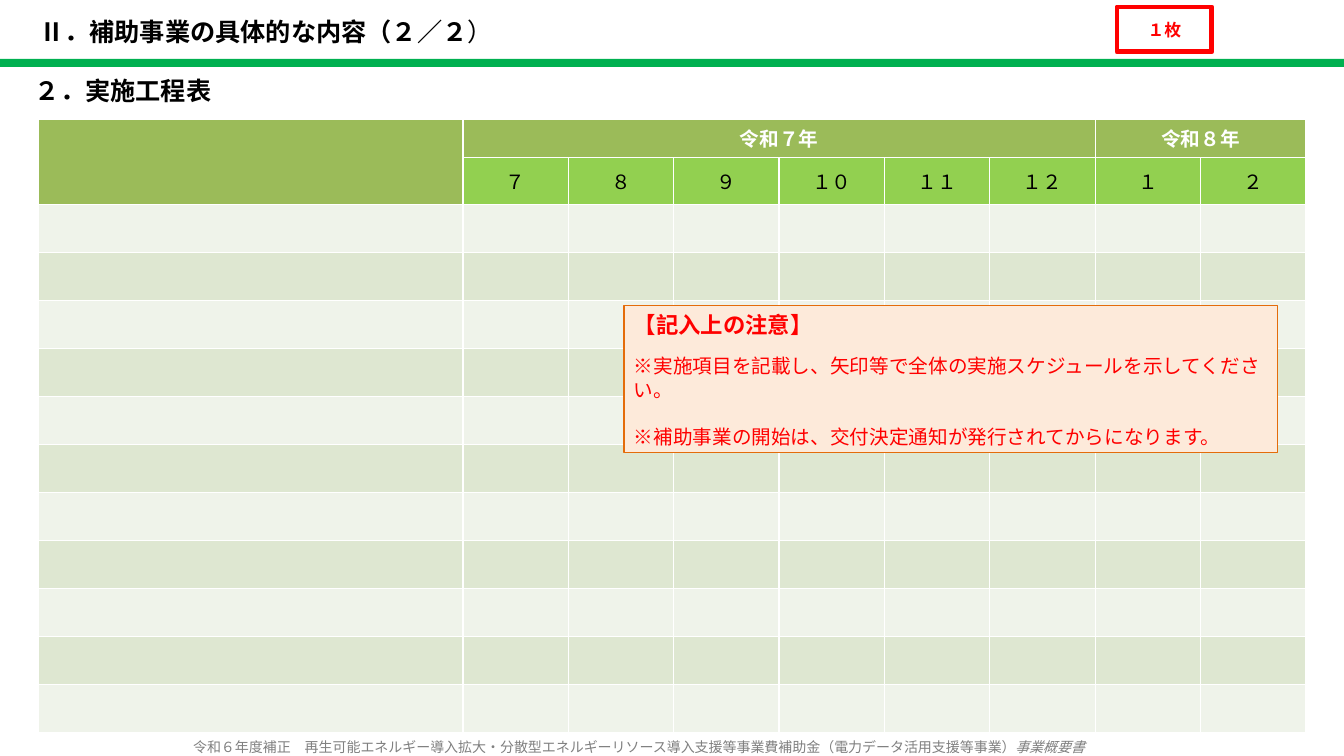
from lxml import etree
from pptx import Presentation
from pptx.dml.color import RGBColor
from pptx.enum.shapes import MSO_SHAPE
from pptx.enum.text import MSO_ANCHOR, MSO_AUTO_SIZE, PP_ALIGN
from pptx.oxml.ns import qn
from pptx.util import Pt

PX = 9071
FONT = "Noto Sans CJK JP"
TITLE_ONLY = 5
RECTANGLE = MSO_SHAPE.RECTANGLE
LEFT, CENTER = PP_ALIGN.LEFT, PP_ALIGN.CENTER
TOP, MIDDLE = MSO_ANCHOR.TOP, MSO_ANCHOR.MIDDLE
NO_AUTOFIT = MSO_AUTO_SIZE.NONE

BLACK = RGBColor(0x00, 0x00, 0x00)
WHITE = RGBColor(0xFF, 0xFF, 0xFF)
GRAY = RGBColor(0x80, 0x80, 0x80)
RED = RGBColor(0xFF, 0x00, 0x00)
GREEN = RGBColor(0x00, 0xB0, 0x50)
YEAR_GREEN = RGBColor(0x9B, 0xBB, 0x59)
MONTH_GREEN = RGBColor(0x92, 0xD0, 0x50)
BANDS = (RGBColor(0xEF, 0xF3, 0xEA), RGBColor(0xDE, 0xE7, 0xD1))
NOTE_FILL = RGBColor(0xFD, 0xEA, 0xDA)
NOTE_LINE = RGBColor(0xE4, 0x6C, 0x0A)

MONTHS = ("７", "８", "９", "１０", "１１", "１２", "１", "２")
YEARS = (("令和７年", 1, 6), ("令和８年", 7, 8))
HEADER_HEIGHTS = (38, 47)
ITEM_ROWS = 11
ITEM_HEIGHT = 48
ITEM_WIDTH = 425
MONTHS_WIDTH = 843

NOTES = (
    ("【記入上の注意】", 16, True, 19, 0),
    ("※実施項目を記載し、矢印等で全体の実施スケジュールを示してください。", 14, False, 16.75, 12),
    ("※補助事業の開始は、交付決定通知が発行されてからになります。", 14, False, 16.75, 16.75),
)


def emu(*lengths):
    return [length * PX for length in lengths]


def write(para, texts, size, color, bold=False, align=LEFT):
    for text in texts:
        para.add_run().text = text
    para.alignment = align
    font = para.font
    font.size, font.bold, font.name = Pt(size), bold, FONT
    font.color.rgb = color
    etree.SubElement(font._rPr, qn("a:ea"), typeface=FONT)
    return para


def set_frame(box, anchor):
    frame = box.text_frame
    frame.word_wrap = True
    frame.auto_size = NO_AUTOFIT
    frame.vertical_anchor = anchor
    return frame


def add_text(page, bounds, texts, size, color, bold=False, align=LEFT):
    box = page.shapes.add_textbox(*emu(*bounds))
    frame = set_frame(box, MIDDLE)
    return write(frame.paragraphs[0], texts, size, color, bold, align)


def add_box(page, bounds, fill, line=None, line_width=0):
    box = page.shapes.add_shape(RECTANGLE, *emu(*bounds))
    box.shadow.inherit = False
    box.fill.solid()
    box.fill.fore_color.rgb = fill
    if line is None:
        box.line.fill.background()
    else:
        box.line.color.rgb = line
        box.line.width = Pt(line_width)
    return box


def add_title(page):
    title = page.shapes.title
    title.left, title.top, title.width, title.height = emu(29, 11, 928, 41)
    frame = set_frame(title, MIDDLE)
    para = write(frame.paragraphs[0], ("Ⅱ．補助事業の具体的な内容（２／２", "）"), 18, BLACK, True)
    para.runs[-1].font.bold = False


def fill_cell(cell, color):
    cell.fill.solid()
    cell.fill.fore_color.rgb = color


def add_schedule(page):
    heights = HEADER_HEIGHTS + (ITEM_HEIGHT,) * ITEM_ROWS
    bounds = emu(38, 119, ITEM_WIDTH + MONTHS_WIDTH, sum(heights))
    table = page.shapes.add_table(len(heights), len(MONTHS) + 1, *bounds).table
    for row, height in zip(table.rows, heights):
        row.height = height * PX
    for column in table.columns:
        column.width = MONTHS_WIDTH * PX // len(MONTHS)
    table.columns[0].width = ITEM_WIDTH * PX

    for index, row in enumerate(table.rows):
        for cell in row.cells:
            fill_cell(cell, YEAR_GREEN if index == 0 else BANDS[index % 2])
    fill_cell(table.cell(1, 0), YEAR_GREEN)
    table.cell(0, 0).merge(table.cell(1, 0))

    for year, first, last in YEARS:
        cell = table.cell(0, first)
        cell.merge(table.cell(0, last))
        write(cell.text_frame.paragraphs[0], (year,), 14, WHITE, True, CENTER)
    for column, month in enumerate(MONTHS, 1):
        cell = table.cell(1, column)
        fill_cell(cell, MONTH_GREEN)
        cell.vertical_anchor = MIDDLE
        write(cell.text_frame.paragraphs[0], (month,), 14, BLACK, False, CENTER)


def add_notes(page):
    box = add_box(page, (624, 306, 654, 147), NOTE_FILL, NOTE_LINE, 0.75)
    frame = set_frame(box, TOP)
    for index, (text, size, bold, spacing, before) in enumerate(NOTES):
        para = frame.add_paragraph() if index else frame.paragraphs[0]
        write(para, (text,), size, RED, bold)
        para.line_spacing = Pt(spacing)
        para.space_before = Pt(before)


def main():
    deck = Presentation()
    deck.slide_width, deck.slide_height = emu(1344, 756)
    page = deck.slides.add_slide(deck.slide_layouts[TITLE_ONLY])

    footer = add_text(
        page, (0, 738, 1278, 18),
        ("令和６年度補正　再生可能エネルギー導入拡大・分散型エネルギーリソース導入支援等事業費補助金（電力データ活用支援等事業）",
         "事業概要書"),
        10, GRAY, align=CENTER)
    footer.runs[-1].font.italic = True
    add_box(page, (0, 59, 1344, 8), GREEN)
    add_title(page)
    badge = add_box(page, (1117, 7, 95, 45), WHITE, RED, 3.5)
    write(set_frame(badge, MIDDLE).paragraphs[0], ("１枚",), 12, RED, True, CENTER)
    add_text(page, (25, 63, 469, 55), ("２．実施工程表",), 18, BLACK, True)
    add_schedule(page)
    add_notes(page)
    deck.save("out.pptx")


if __name__ == "__main__":
    main()
